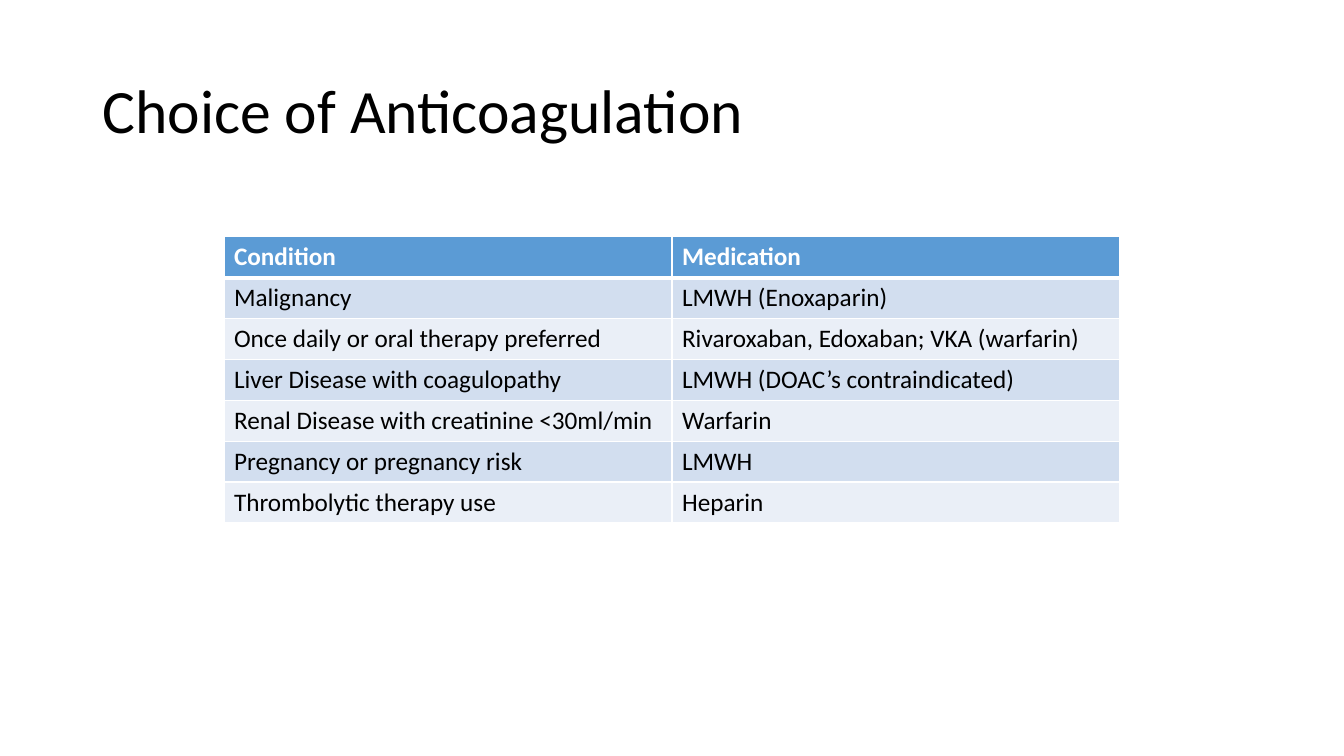
from dataclasses import dataclass

from lxml.etree import SubElement
from pptx import Presentation
from pptx.dml.color import RGBColor as RGB
from pptx.enum.text import MSO_ANCHOR as Anchor
from pptx.oxml.ns import qn
from pptx.util import Inches, Pt

FONT = "Calibri"
COLORS = {
    "text": "000000",
    "header": "5B9BD5",
    "band_dark": "D2DEEF",
    "band_light": "EAEFF7",
    "white": "FFFFFF",
}
SLIDE_W, SLIDE_H = Inches(13.33), Inches(7.5)
GRID_COL = SLIDE_W / 6
TABLE_TOP = 0.3133
ROW_H = 0.0541


@dataclass(frozen=True)
class Choice:
    condition: str
    medication: str


@dataclass(frozen=True)
class RowStyle:
    fill: str
    color: str
    bold: bool
    top: float
    bottom: float


CHOICES = [
    Choice("Condition", "Medication"),
    Choice("Malignancy", "LMWH (Enoxaparin)"),
    Choice("Once daily or oral therapy preferred", "Rivaroxaban, Edoxaban; VKA (warfarin)"),
    Choice("Liver Disease with coagulopathy", "LMWH (DOAC’s contraindicated)"),
    Choice("Renal Disease with creatinine <30ml/min", "Warfarin"),
    Choice("Pregnancy or pregnancy risk", "LMWH"),
    Choice("Thrombolytic therapy use", "Heparin"),
]


def row_style(row: int) -> RowStyle:
    if row == 0:
        return RowStyle("header", "white", True, 1, 3)
    band = "band_dark" if row % 2 else "band_light"
    return RowStyle(band, "text", False, 3 if row == 1 else 1, 1)


def format_text(tf, size: float, color: str, bold: bool = False) -> None:
    for p in tf.paragraphs:
        for r in p.runs:
            r.font.name = FONT
            r.font.size = Pt(size)
            r.font.bold = bold
            r.font.color.rgb = RGB.from_string(COLORS[color])


def add_borders(cell, style: RowStyle) -> None:
    tc_pr = cell._tc.get_or_add_tcPr()
    widths = {"lnL": 1, "lnR": 1, "lnT": style.top, "lnB": style.bottom}
    for side, width in widths.items():
        ln = SubElement(tc_pr, qn(f"a:{side}"), w=str(Pt(width)))
        fill = SubElement(ln, qn("a:solidFill"))
        SubElement(fill, qn("a:srgbClr"), val=COLORS["white"])


def draw_cell(cell, text: str, style: RowStyle) -> None:
    cell.text_frame.text = text
    format_text(cell.text_frame, 18, style.color, style.bold)
    add_borders(cell, style)
    cell.fill.solid()
    cell.fill.fore_color.rgb = RGB.from_string(COLORS[style.fill])


def draw_title(s, text: str) -> None:
    sp = s.shapes.add_textbox(
        int(SLIDE_W * 0.069), int(SLIDE_H * 0.0533),
        int(SLIDE_W * 0.8627), int(SLIDE_H * 0.1933),
    )
    tf = sp.text_frame
    tf.word_wrap = True
    tf.vertical_anchor = Anchor.MIDDLE
    tf.text = text
    tf.paragraphs[0].line_spacing = 0.9
    format_text(tf, 44, "text")


def draw_table(s, choices: list[Choice]) -> None:
    row_h = int(SLIDE_H * ROW_H)
    table = s.shapes.add_table(
        len(choices), 2, int(GRID_COL), int(SLIDE_H * TABLE_TOP),
        int(GRID_COL * 4), row_h * len(choices),
    ).table
    for row, choice in enumerate(choices):
        table.rows[row].height = row_h
        for col, text in enumerate((choice.condition, choice.medication)):
            draw_cell(table.cell(row, col), text, row_style(row))


def main() -> None:
    prs = Presentation()
    prs.slide_width, prs.slide_height = SLIDE_W, SLIDE_H
    s = prs.slides.add_slide(prs.slide_layouts[6])
    draw_title(s, "Choice of Anticoagulation")
    draw_table(s, CHOICES)
    prs.save("out.pptx")


if __name__ == "__main__":
    main()
